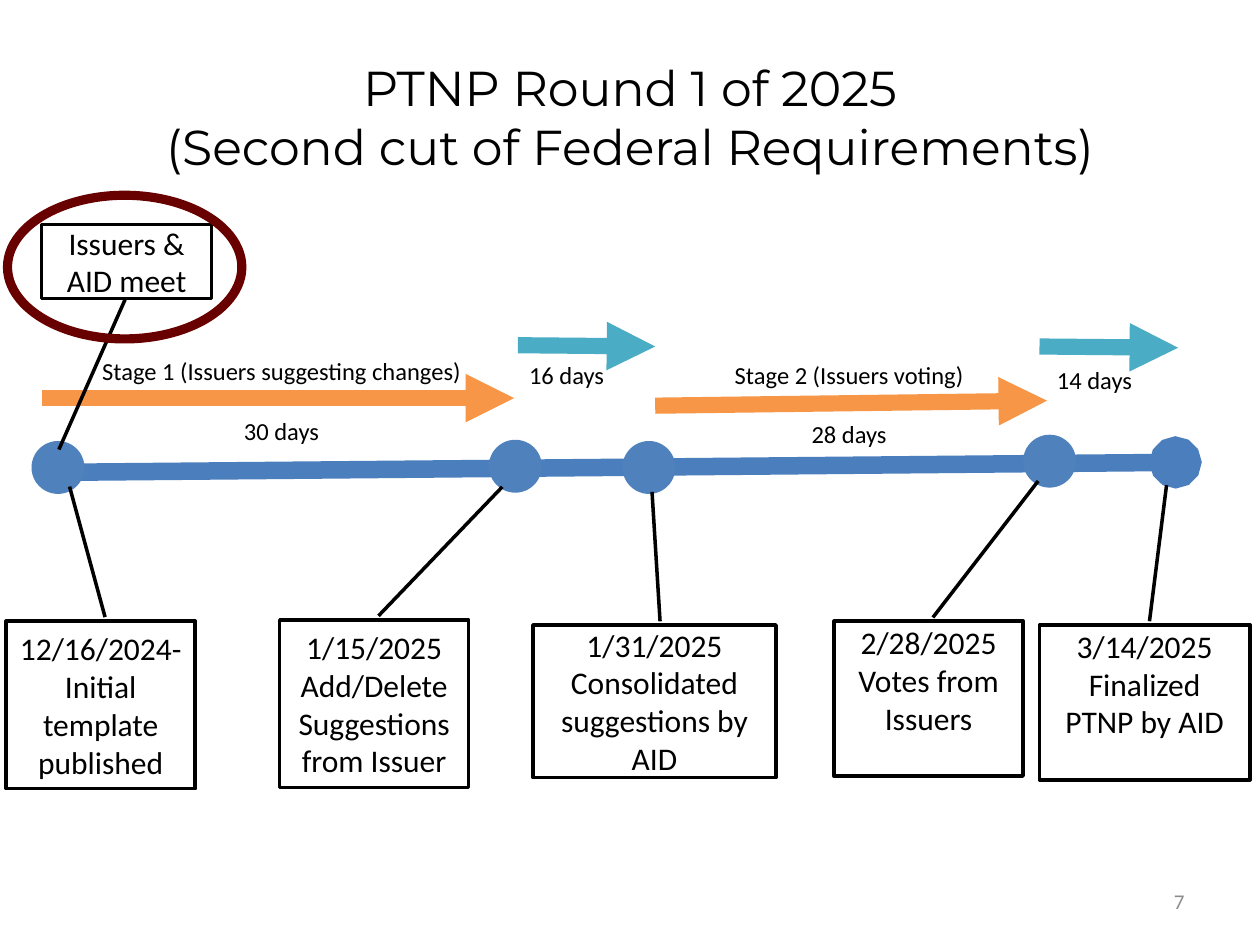
from lxml.etree import SubElement
from pptx import Presentation
from pptx.dml.color import RGBColor
from pptx.enum.shapes import MSO_CONNECTOR, MSO_SHAPE as SHAPE
from pptx.enum.text import MSO_ANCHOR as ANCHOR, PP_ALIGN as ALIGN
from pptx.oxml.ns import qn
from pptx.util import Pt

PX = 9144  # EMU per px, 100 px to the inch


def color(hex_code):
    return RGBColor.from_string(hex_code)


def write(box, text, size, align=ALIGN.CENTER, anchor=ANCHOR.TOP,
          font="Calibri", ink="000000"):
    frame = box.text_frame
    frame.word_wrap = True
    frame.vertical_anchor = anchor
    frame.text = text
    for para in frame.paragraphs:
        para.alignment = align
        for span in para.runs:
            span.font.size = Pt(size)
            span.font.name = font
            span.font.color.rgb = color(ink)


deck = Presentation()
deck.slide_width, deck.slide_height = 1000 * PX, 750 * PX
page = deck.slides.add_slide(deck.slide_layouts[5])
shapes = page.shapes

# Title
title = shapes.title
title.left, title.top, title.width, title.height = [v * PX for v in (50, 30, 900, 125)]
write(title, "PTNP Round 1 of 2025\v(Second cut of Federal Requirements)", 28,
      anchor=ANCHOR.MIDDLE, font="Montserrat")

# Slide number
number = shapes.add_textbox(717 * PX, 695 * PX, 233 * PX, 40 * PX)
write(number, "7", 12, ALIGN.RIGHT, ANCHOR.MIDDLE, ink="8C8C8C")

# Timeline bar, stage arrows and waiting-period arrows
arrows = [
    (33, 375, 933, 367, "4B7EBC", 10, "oval"),
    (33, 316, 408, 316, "F79646", 9.25, "triangle"),
    (520, 322, 831, 318, "F79646", 9.25, "triangle"),
    (411, 274, 520, 275, "4BACC6", 9.25, "triangle"),
    (825, 275, 935, 276, "4BACC6", 9.25, "triangle"),
]
for x1, y1, x2, y2, ink, weight, end in arrows:
    arrow = shapes.add_connector(MSO_CONNECTOR.STRAIGHT, x1 * PX, y1 * PX, x2 * PX, y2 * PX)
    arrow.line.color.rgb = color(ink)
    arrow.line.width = Pt(weight)
    SubElement(arrow.line._get_or_add_ln(), qn("a:tailEnd"), type=end)
    SubElement(arrow._element.spPr, qn("a:effectLst"))

# Milestone dots
for left, top in [(25, 350), (388, 349), (494, 350), (812, 345)]:
    dot = shapes.add_shape(SHAPE.FLOWCHART_CONNECTOR, left * PX, top * PX, 42 * PX, 42 * PX)
    dot.shadow.inherit = False
    dot.fill.solid()
    dot.fill.fore_color.rgb = color("4F81BD")
    dot.line.fill.background()

# Stage names above the arrows, durations below
stages = [
    (62, 278, 323, "Stage 1 (Issuers suggesting changes)\n30 days"),
    (536, 281, 276, "Stage 2 (Issuers voting)\n28 days"),
]
for left, top, width, text in stages:
    stage = shapes.add_textbox(left * PX, top * PX, width * PX, 81 * PX)
    write(stage, text, 14)
    stage.text_frame.paragraphs[1].space_before = Pt(17)

# Waiting periods
for left, top, text in [(410, 281, "16 days"), (829, 285, "14 days")]:
    wait = shapes.add_textbox(left * PX, top * PX, 102 * PX, 34 * PX)
    write(wait, text, 14, ALIGN.LEFT)

# Callouts: left, top, width, height, bottom inset, pointer ends, text
callouts = [
    (825, 496, 167, 123, 35, (-0.024, 0.523, -0.902, 0.604),
     "3/14/2025\nFinalized PTNP by AID"),
    (662, 493, 150, 123, 35, (-0.024, 0.523, -0.904, 1.08),
     "2/28/2025 Votes from Issuers"),
    (423, 496, 193, 121, 5, (-0.024, 0.523, -0.873, 0.49),
     "1/31/2025\nConsolidated suggestions by AID"),
    (5, 493, 150, 133, 5, (-0.024, 0.523, -0.803, 0.335),
     "12/16/2024-Initial template published"),
    (222, 492, 150, 133, 5, (-0.024, 0.523, -0.794, 1.178),
     "1/15/2025\nAdd/Delete Suggestions from Issuer"),
    (33, 178, 135, 59, 5, (1.014, 0.491, 3.03, 0.102),
     "Issuers & AID meet"),
]
for left, top, width, height, inset, pointer, text in callouts:
    callout = shapes.add_shape(SHAPE.LINE_CALLOUT_1, left * PX, top * PX, width * PX, height * PX)
    callout.shadow.inherit = False
    for index, value in enumerate(pointer):
        callout.adjustments[index] = value
    callout.fill.solid()
    callout.fill.fore_color.rgb = color("FFFFFF")
    callout.line.color.rgb = color("000000")
    callout.line.width = Pt(2)
    write(callout, text, 18, anchor=ANCHOR.MIDDLE)
    callout.text_frame.margin_bottom = inset * PX

# Ring around the meeting
ring = shapes.add_shape(SHAPE.OVAL, 6 * PX, 155 * PX, 186 * PX, 114 * PX)
ring.shadow.inherit = False
ring.fill.background()
ring.line.color.rgb = color("680000")
ring.line.width = Pt(5.25)

deck.save("out.pptx")
